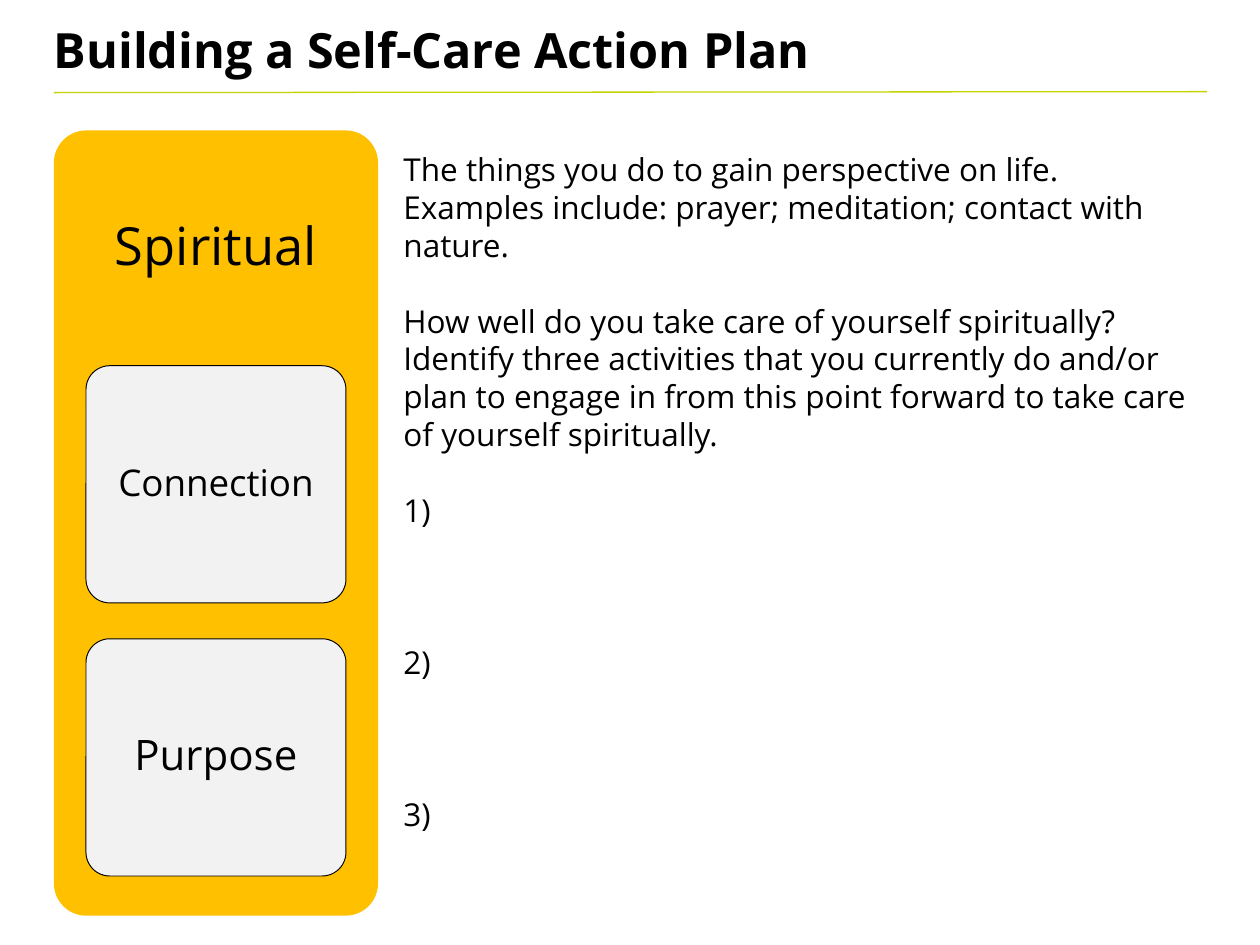
from dataclasses import dataclass

from lxml import etree
from pptx import Presentation
from pptx.dml.color import RGBColor
from pptx.enum.shapes import MSO_CONNECTOR, MSO_SHAPE
from pptx.enum.text import MSO_ANCHOR, PP_ALIGN
from pptx.oxml.ns import qn
from pptx.util import Inches, Pt

FONT = "Open Sans"
BLACK = RGBColor(0x00, 0x00, 0x00)
GOLD = RGBColor(0xFF, 0xC0, 0x00)
PALE_GRAY = RGBColor(0xF2, 0xF2, 0xF2)
LIME = RGBColor(0xC6, 0xD3, 0x01)

BODY_SIZE = 24
BODY_LINE = 29  # height of one body line, in points
CARD_TOP, CARD_PITCH = 3.87, 2.89


@dataclass
class Card:
    text: str
    size: int


@dataclass
class BodyParagraph:
    text: str
    lines_before: int


CARDS = [Card("Connection", 28), Card("Purpose", 32)]

BODY = [
    BodyParagraph("The things you do to gain perspective on life. Examples include: "
                  "prayer; meditation; contact with nature.", 0),
    BodyParagraph("How well do you take care of yourself spiritually? Identify three "
                  "activities that you currently do and/or plan to engage in from this "
                  "point forward to take care of yourself spiritually.", 1),
    BodyParagraph("1)", 1),
    BodyParagraph("2)", 3),
    BodyParagraph("3)", 3),
]


def style_runs(p, size: float, bold: bool = False) -> None:
    for r in p.runs:
        r.font.name = FONT
        r.font.size = Pt(size)
        r.font.bold = bold
        r.font.color.rgb = BLACK


def center_label(sp, text: str, size: float) -> None:
    tf = sp.text_frame
    tf.word_wrap = True
    tf.vertical_anchor = MSO_ANCHOR.MIDDLE
    tf.text = text
    p = tf.paragraphs[0]
    p.alignment = PP_ALIGN.CENTER
    p.line_spacing = 0.9
    style_runs(p, size)


def add_text_box(s, x: float, y: float, w: float, h: float):
    sp = s.shapes.add_textbox(Inches(x), Inches(y), Inches(w), Inches(h))
    sp.text_frame.word_wrap = True
    return sp


def add_round_rect(s, x: float, y: float, w: float, h: float, fill: RGBColor):
    sp = s.shapes.add_shape(MSO_SHAPE.ROUNDED_RECTANGLE,
                            Inches(x), Inches(y), Inches(w), Inches(h))
    sp.adjustments[0] = 0.1
    sp.shadow.inherit = False
    sp.fill.solid()
    sp.fill.fore_color.rgb = fill
    sp.line.fill.background()
    return sp


def add_card(s, card: Card, y: float) -> None:
    sp = add_round_rect(s, 0.91, y, 2.75, 2.51, PALE_GRAY)
    sp.line.color.rgb = BLACK
    sp.line.width = Pt(0.75)
    center_label(sp, card.text, card.size)


def add_title(s, text: str) -> None:
    tf = add_text_box(s, 0.44, 0.14, 8.94, 0.76).text_frame
    tf.margin_left = tf.margin_right = Inches(0.13)
    tf.margin_top = tf.margin_bottom = Inches(0.07)
    tf.text = text
    style_runs(tf.paragraphs[0], 37, bold=True)


def add_rule(s) -> None:
    line = s.shapes.add_connector(MSO_CONNECTOR.STRAIGHT, Inches(0.57), Inches(0.98),
                                  Inches(12.77), Inches(0.97))
    line.line.color.rgb = LIME
    line.line.width = Pt(1)
    etree.SubElement(line._element.spPr, qn("a:effectLst"))


def add_body(s, paragraphs: list[BodyParagraph]) -> None:
    tf = add_text_box(s, 4.17, 1.54, 8.6, 7.37).text_frame
    for i, item in enumerate(paragraphs):
        p = tf.paragraphs[0] if i == 0 else tf.add_paragraph()
        p.text = item.text
        p.space_before = Pt(item.lines_before * BODY_LINE)
        style_runs(p, BODY_SIZE)


def main() -> None:
    prs = Presentation()
    prs.slide_width, prs.slide_height = Inches(13.33), Inches(10)
    s = prs.slides.add_slide(prs.slide_layouts[6])

    # Panel with its heading and cards
    add_round_rect(s, 0.57, 1.38, 3.43, 8.31, GOLD)
    center_label(add_text_box(s, 0.57, 1.38, 3.43, 2.49), "Spiritual", 40)
    for i, card in enumerate(CARDS):
        add_card(s, card, CARD_TOP + i * CARD_PITCH)

    # Title and rule
    add_title(s, "Building a Self-Care Action Plan")
    add_rule(s)

    # Prompts and numbered answers
    add_body(s, BODY)

    prs.save("out.pptx")


if __name__ == "__main__":
    main()
